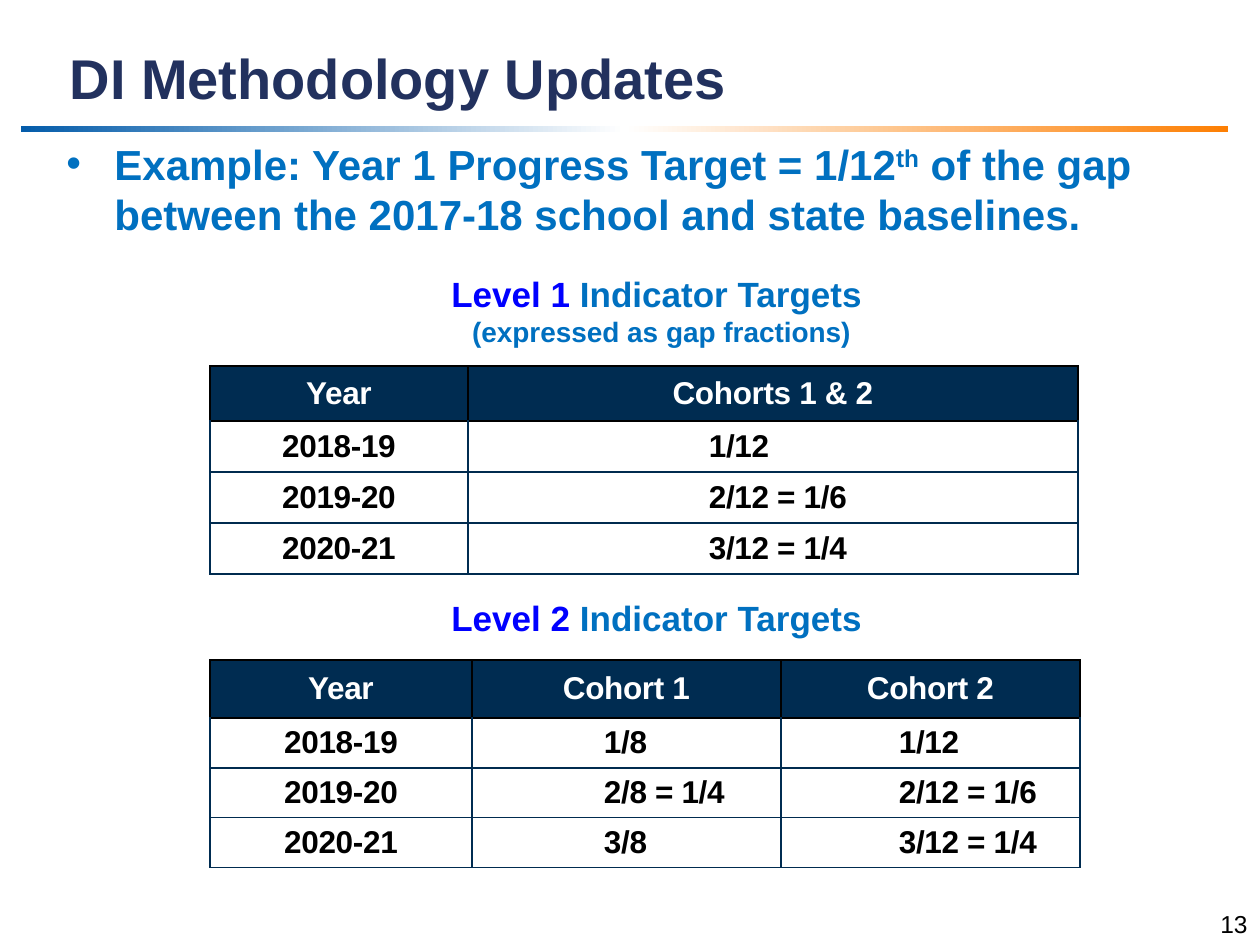
from dataclasses import dataclass

from lxml import etree
from pptx import Presentation
from pptx import util as u
from pptx.dml.color import RGBColor
from pptx.enum import shapes, text
from pptx.oxml import ns

SCALE = 914400 / 126


@dataclass(frozen=True)
class Theme:
    """Colours and type sizes of the slide."""
    font: str = "Arial"
    title: str = "22315E"
    body: str = "0070C0"
    level: str = "0000FF"
    header: str = "002C51"
    grid: str = "002B4F"
    black: str = "000000"
    white: str = "FFFFFF"
    rule: tuple = ("045CAA", "FFFFFF", "FD7F03")
    title_size: int = 32
    body_size: int = 24
    label_size: int = 20
    note_size: int = 16
    cell_size: int = 18
    number_size: int = 14


T = Theme()


def px(n):
    """Turn pixels into EMU."""
    return u.Emu(round(n * SCALE))


def child(parent, tag, **attrs):
    """Append a DrawingML element."""
    el = etree.SubElement(parent, ns.qn(tag))
    for key, value in attrs.items():
        el.set(key, str(value))
    return el


def style(font, size, color, bold=True):
    """Set the look of a font."""
    font.name, font.size, font.bold = T.font, u.Pt(size), bold
    font.color.rgb = RGBColor.from_string(color)


def add_text_frame(slide, box, wrap=True):
    """Add a text box and return its text frame."""
    tf = slide.shapes.add_textbox(*map(px, box)).text_frame
    tf.word_wrap = wrap
    return tf


def add_title(slide, box, words):
    """Place the title placeholder."""
    sp = slide.shapes.title
    sp.left, sp.top, sp.width, sp.height = map(px, box)
    tf = sp.text_frame
    tf.text = words
    tf.auto_size = text.MSO_AUTO_SIZE.NONE
    tf.vertical_anchor = text.MSO_ANCHOR.BOTTOM
    p = tf.paragraphs[0]
    p.alignment, p.line_spacing = text.PP_ALIGN.LEFT, u.Pt(36)
    style(p.font, T.title_size, T.title)


def add_rule(slide, box):
    """Draw the gradient bar below the title."""
    sp = slide.shapes.add_shape(shapes.MSO_SHAPE.RECTANGLE, *map(px, box))
    sp.shadow.inherit = False
    sp.line.fill.background()
    sp.fill.gradient()
    sp.fill.gradient_angle = 0
    stops = sp._element.spPr.find(".//" + ns.qn("a:gsLst"))
    for stop in list(stops):
        stops.remove(stop)
    for i, color in enumerate(T.rule):
        child(child(stops, "a:gs", pos=i * 50000), "a:srgbClr", val=color)


def add_bullet(slide, box, parts):
    """Add the bulleted statement; its middle part is superscript."""
    p = add_text_frame(slide, box).paragraphs[0]
    indent = px(48)
    pPr = p._p.get_or_add_pPr()
    pPr.set("marL", str(indent))
    pPr.set("indent", str(-indent))
    child(pPr, "a:buFont", typeface=T.font)
    child(pPr, "a:buChar", char="•")
    style(p.font, T.body_size, T.body)
    for part in parts:
        p.add_run().text = part
    p.runs[1]._r.get_or_add_rPr().set("baseline", "30000")


def add_label(slide, box, level, note=None):
    """Add a table heading with an optional second line."""
    p = add_text_frame(slide, box, wrap=False).paragraphs[0]
    p.alignment = text.PP_ALIGN.CENTER
    parts = [(level, T.label_size, T.level),
             ("Indicator Targets ", T.label_size, T.body)]
    if note:
        parts.append((note, T.note_size, T.body))
    for words, size, color in parts:
        if words == note:
            p.add_line_break()
        r = p.add_run()
        r.text = words
        style(r.font, size, color)


def set_borders(cell, row):
    """Draw black lines around header cells and navy lines elsewhere."""
    tcPr = cell._tc.get_or_add_tcPr()
    for side in "LRTB":
        if row == 0 or (row == 1 and side == "T"):
            color, width = T.black, 1
        elif side in "LR":
            color, width = T.header, 1
        else:
            color, width = T.grid, 0.75
        ln = child(tcPr, "a:ln" + side, w=u.Pt(width))
        child(child(ln, "a:solidFill"), "a:srgbClr", val=color)


def fill_cell(cell, row, words, indent):
    """Write one cell; an indent sets it flush left."""
    set_borders(cell, row)
    cell.fill.solid()
    cell.fill.fore_color.rgb = RGBColor.from_string(T.white if row else T.header)
    cell.vertical_anchor = text.MSO_ANCHOR.MIDDLE
    cell.margin_left = cell.margin_right = px(9)
    cell.margin_top = cell.margin_bottom = 0
    p = cell.text_frame.paragraphs[0]
    if row and indent:
        p.alignment = text.PP_ALIGN.LEFT
        p._p.get_or_add_pPr().set("marL", str(px(indent)))
    else:
        p.alignment = text.PP_ALIGN.CENTER
    style(p.font, T.cell_size, T.black if row else T.white)
    r = p.add_run()
    r.text = words
    r._r.get_or_add_rPr().set("spc", "-20")


def add_targets(slide, origin, widths, heights, indents, rows):
    """Add a table of yearly targets; heights are header and body."""
    header, body = heights
    size = sum(widths), header + body * (len(rows) - 1)
    table = slide.shapes.add_table(
        len(rows), len(widths), *map(px, origin + size)).table
    table.first_row = table.horz_banding = False
    for column, width in zip(table.columns, widths):
        column.width = px(width)
    for i, row in enumerate(rows):
        table.rows[i].height = px(body if i else header)
        for j, words in enumerate(row):
            fill_cell(table.cell(i, j), i, words, indents[j])


def main():
    """Build and save the slide."""
    prs = Presentation()
    prs.slide_width, prs.slide_height = px(1260), px(945)
    slide = prs.slides.add_slide(prs.slide_layouts[5])
    add_rule(slide, (21, 126, 1207, 6))
    add_title(slide, (57, 0, 1063, 117), "DI Methodology Updates")
    add_bullet(slide, (54, 132, 1150, 120), (
        "Example: Year 1 Progress Target = 1/12", "th",
        " of the gap between the 2017-18 school and state baselines."))
    add_label(slide, (437, 266, 449, 89), "Level 1 ",
              "(expressed as gap fractions)")
    add_targets(slide, (210, 366), (258, 610), (55, 51), (0, 232), (
        ("Year", "Cohorts 1 & 2"),
        ("2018-19", "1/12"),
        ("2019-20", "2/12 = 1/6"),
        ("2020-21", "3/12 = 1/4")))
    add_label(slide, (437, 590, 449, 50), "Level 2 ")
    add_targets(slide, (210, 660), (262, 309, 299), (58, 50), (0, 123, 109), (
        ("Year", "Cohort 1", "Cohort 2"),
        ("2018-19", "1/8", "1/12"),
        ("2019-20", "2/8 = 1/4", "2/12 = 1/6"),
        ("2020-21", "3/8", "3/12 = 1/4")))
    p = add_text_frame(slide, (966, 903, 294, 42)).paragraphs[0]
    p.alignment = text.PP_ALIGN.RIGHT
    style(p.font, T.number_size, T.black, bold=False)
    p.add_run().text = "13"
    prs.save("out.pptx")


if __name__ == "__main__":
    main()
